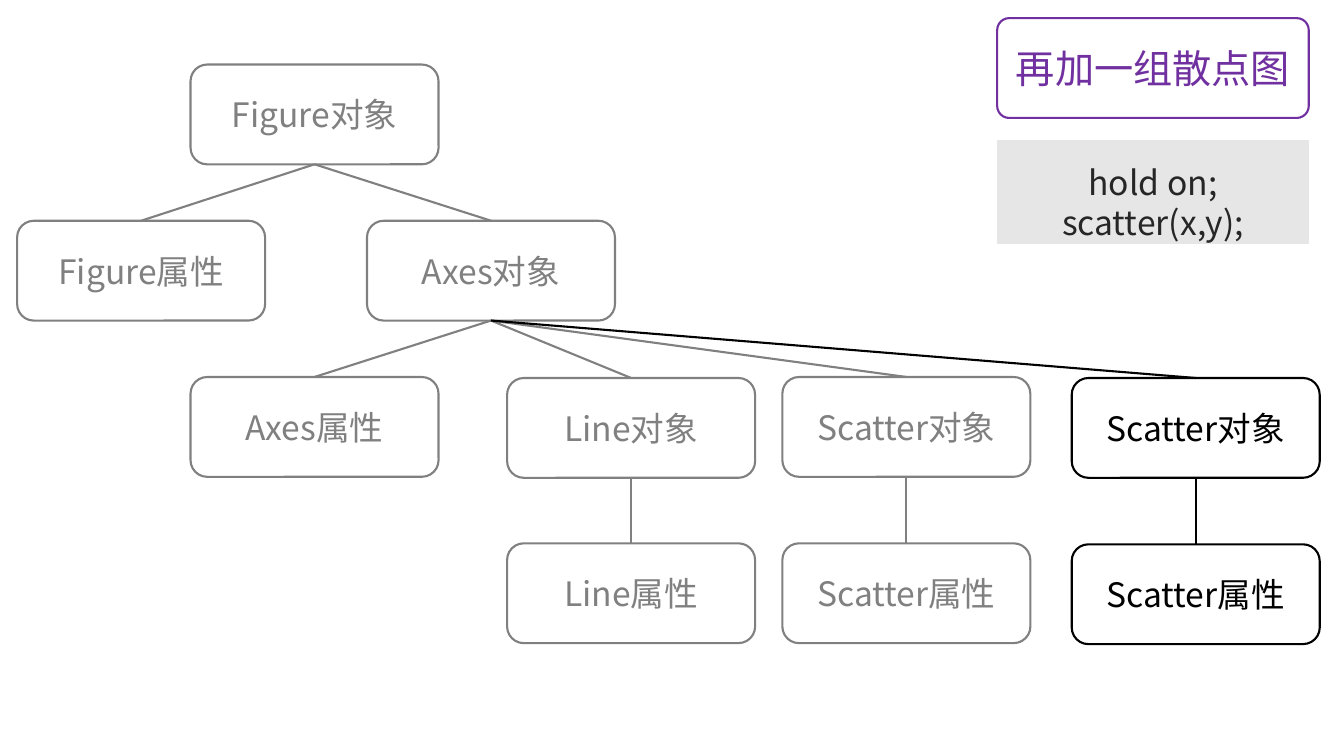
from dataclasses import dataclass

from lxml import etree
from pptx import Presentation
from pptx.dml.color import RGBColor
from pptx.enum.shapes import MSO_CONNECTOR, MSO_SHAPE
from pptx.enum.text import MSO_ANCHOR, PP_ALIGN
from pptx.oxml.ns import qn
from pptx.util import Pt

ROUNDED = MSO_SHAPE.ROUNDED_RECTANGLE
STRAIGHT = MSO_CONNECTOR.STRAIGHT
CENTER = PP_ALIGN.CENTER
MIDDLE = MSO_ANCHOR.MIDDLE
TOP, BOTTOM = 0, 2

PX = 9144
NODE_WIDTH, NODE_HEIGHT = 246, 99
SIDE_LEFT, SIDE_WIDTH = 989, 309


@dataclass(frozen=True)
class Theme:
    font: str = "Noto Sans CJK SC"
    paper: str = "FFFFFF"
    existing: str = "808080"
    added: str = "000000"
    accent: str = "7030A0"
    code_fill: str = "E7E6E6"
    code_text: str = "262626"
    body_size: int = 24
    title_size: int = 28
    line_width: float = 1.5


class Diagram:
    def __init__(self, slide, theme):
        self.shapes = slide.shapes
        self.theme = theme

    def label(self, frame, text, size, color):
        frame.text = text
        frame.word_wrap = True
        frame.vertical_anchor = MIDDLE
        for paragraph in frame.paragraphs:
            paragraph.alignment = CENTER
            for run in paragraph.runs:
                run.font.size = Pt(size)
                run.font.color.rgb = RGBColor.from_string(color)
                run.font.name = self.theme.font
                east_asian = etree.SubElement(run.font._element, qn("a:ea"))
                east_asian.set("typeface", self.theme.font)

    def box(self, left, top, width, height, text, size, color, fill, outline=None, radius=None):
        box = self.shapes.add_shape(ROUNDED, left * PX, top * PX, width * PX, height * PX)
        box.shadow.inherit = False
        if radius is not None:
            box.adjustments[0] = radius
        box.fill.solid()
        box.fill.fore_color.rgb = RGBColor.from_string(fill)
        if outline:
            box.line.color.rgb = RGBColor.from_string(outline)
            box.line.width = Pt(self.theme.line_width)
        else:
            box.line.fill.background()
        self.label(box.text_frame, text, size, color)
        return box

    def node(self, left, top, text, color):
        return self.box(left, top, NODE_WIDTH, NODE_HEIGHT, text,
                        self.theme.body_size, color, self.theme.paper, color)

    def branch(self, parent, child, color):
        branch = self.shapes.add_connector(STRAIGHT, 0, 0, 0, 0)
        branch.begin_connect(parent, BOTTOM)
        branch.end_connect(child, TOP)
        branch.line.color.rgb = RGBColor.from_string(color)
        branch.line.width = Pt(self.theme.line_width)
        etree.SubElement(branch._element.spPr, qn("a:effectLst"))

    def title(self, top, text):
        self.box(SIDE_LEFT, top, SIDE_WIDTH, 99, text, self.theme.title_size,
                 self.theme.accent, self.theme.paper, self.theme.accent, radius=0.12)

    def code(self, top, text):
        code = self.box(SIDE_LEFT, top, SIDE_WIDTH, 103, text, self.theme.body_size,
                        self.theme.code_text, self.theme.code_fill, radius=0)
        code.text_frame.paragraphs[0].line_spacing = 1.5


def main():
    presentation = Presentation()
    presentation.slide_width = 1333 * PX
    presentation.slide_height = 750 * PX
    slide = presentation.slides.add_slide(presentation.slide_layouts[6])
    theme = Theme()
    diagram = Diagram(slide, theme)

    tree = [
        ("figure", None, 189, 64, "Figure对象", theme.existing),
        ("figure props", "figure", 17, 219, "Figure属性", theme.existing),
        ("axes", "figure", 364, 219, "Axes对象", theme.existing),
        ("axes props", "axes", 189, 374, "Axes属性", theme.existing),
        ("line", "axes", 503, 375, "Line对象", theme.existing),
        ("line props", "line", 503, 539, "Line属性", theme.existing),
        ("scatter", "axes", 776, 374, "Scatter对象", theme.existing),
        ("scatter props", "scatter", 776, 539, "Scatter属性", theme.existing),
        ("new scatter", "axes", 1063, 375, "Scatter对象", theme.added),
        ("new scatter props", "new scatter", 1063, 540, "Scatter属性", theme.added),
    ]
    nodes = {}
    for key, parent, left, top, text, color in tree:
        nodes[key] = diagram.node(left, top, text, color)
        if parent:
            diagram.branch(nodes[parent], nodes[key], color)

    diagram.title(18, "再加一组散点图")
    diagram.code(139, "hold on;\nscatter(x,y);")
    presentation.save("out.pptx")


if __name__ == "__main__":
    main()
